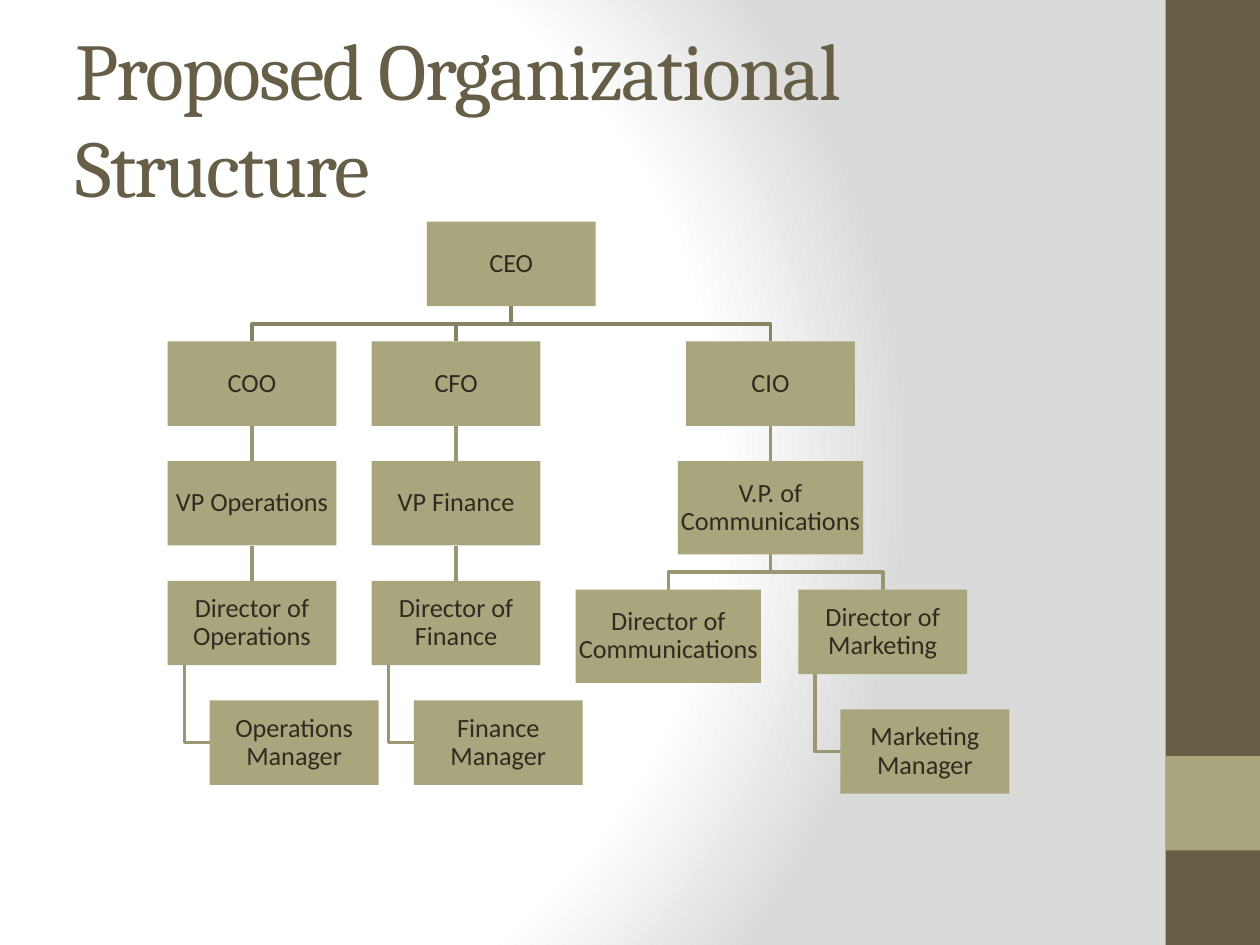
from dataclasses import dataclass

from lxml import etree
from pptx import Presentation
from pptx.dml.color import RGBColor
from pptx.enum.shapes import MSO_CONNECTOR, MSO_SHAPE
from pptx.enum.text import MSO_ANCHOR, PP_ALIGN
from pptx.oxml import parse_xml
from pptx.oxml.ns import nsdecls, qn
from pptx.util import Inches, Pt

RECT = MSO_SHAPE.RECTANGLE
STRAIGHT = MSO_CONNECTOR.STRAIGHT
MIDDLE = MSO_ANCHOR.MIDDLE
CENTER = PP_ALIGN.CENTER

COLORS = {
    "bar": "675E47",
    "box": "A9A57C",
    "ink": "2F2B20",
    "top": "878463",
    "low": "999671",
    "white": "FFFFFF",
    "gray": "DADADA",
}
WIDE, HIGH = 10, 7.5
BOX_W, BOX_H = 1.34, 0.67
BIG_W, BIG_H = 1.47, 0.74
GAP = 0.28
COL = BOX_W + GAP
LEFT, TOP = 2, 1.76


@dataclass
class Post:
    text: str
    col: float
    boss: "Post | None" = None
    big: bool = False
    hang: bool = False

    @property
    def wide(self) -> float:
        return BIG_W if self.big else BOX_W

    @property
    def high(self) -> float:
        return BIG_H if self.big else BOX_H

    @property
    def mid(self) -> float:
        return LEFT + self.col * COL + (BOX_W / 4 if self.hang else 0)

    @property
    def left(self) -> float:
        return self.mid - self.wide / 2

    @property
    def top(self) -> float:
        return self.boss.base + GAP if self.boss else TOP

    @property
    def base(self) -> float:
        return self.top + self.high


def color(name: str) -> RGBColor:
    return RGBColor.from_string(COLORS[name])


def add_rect(slide, left: float, top: float, wide: float, high: float, fill: str):
    shape = slide.shapes.add_shape(
        RECT, Inches(left), Inches(top), Inches(wide), Inches(high)
    )
    shape.shadow.inherit = False
    shape.fill.solid()
    shape.fill.fore_color.rgb = color(fill)
    shape.line.fill.background()
    return shape


def set_font(run, name: str, size: float, ink: str) -> None:
    run.font.name = name
    run.font.size = Pt(size)
    run.font.color.rgb = color(ink)


def add_post(slide, post: Post) -> None:
    frame = add_rect(
        slide, post.left, post.top, post.wide, post.high, "box"
    ).text_frame
    frame.text = post.text
    frame.word_wrap = True
    frame.vertical_anchor = MIDDLE
    frame.margin_left = frame.margin_right = Inches(0.01)
    frame.margin_top = frame.margin_bottom = Inches(0.01)
    para = frame.paragraphs[0]
    para.alignment = CENTER
    para.line_spacing = 0.9
    set_font(para.runs[0], "Calibri", 15, "ink")


def add_link(slide, post: Post) -> None:
    boss = post.boss
    if post.hang:
        stem, side = boss.left + boss.wide / 10, post.top + post.high / 2
        points = [(stem, boss.base), (stem, side), (post.left, side)]
    else:
        bend = boss.base + GAP / 2
        points = [
            (boss.mid, boss.base),
            (boss.mid, bend),
            (post.mid, bend),
            (post.mid, post.top),
        ]
    spots = [(Inches(x), Inches(y)) for x, y in points]
    if boss.mid == post.mid:
        link = slide.shapes.add_connector(STRAIGHT, *spots[0], *spots[-1])
    else:
        path = slide.shapes.build_freeform(*spots[0])
        path.add_line_segments(spots[1:], close=False)
        link = path.convert_to_shape()
        link.fill.background()
    link.line.color.rgb = color("low" if boss.boss else "top")
    link.line.width = Pt(2)
    etree.SubElement(link._element.spPr, qn("a:effectLst"))


def add_back(slide) -> None:
    slide.background.fill.solid()
    flat = slide._element.find(".//" + qn("a:solidFill"))
    stops = "".join(
        f'<a:gs pos="{pos * 1000}"><a:srgbClr val="{COLORS[name]}"/></a:gs>'
        for pos, name in ((0, "white"), (75, "white"), (100, "gray"))
    )
    grad = parse_xml(
        f'<a:gradFill {nsdecls("a")} rotWithShape="1"><a:gsLst>{stops}</a:gsLst>'
        '<a:path path="circle"><a:fillToRect l="20000" t="50000" r="100000"'
        ' b="50000"/></a:path></a:gradFill>'
    )
    flat.getparent().replace(flat, grad)


def add_title(slide, text: str) -> None:
    frame = slide.shapes.add_textbox(
        Inches(WIDE * 0.05), Inches(HIGH * 0.04), Inches(8.33), Inches(HIGH / 6)
    ).text_frame
    frame.text = text
    frame.word_wrap = True
    frame.vertical_anchor = MIDDLE
    run = frame.paragraphs[0].runs[0]
    set_font(run, "Cambria", 46, "bar")
    run.font._element.set("spc", "-100")


def get_posts() -> list[Post]:
    ceo = Post("CEO", 1.27)
    posts = [ceo]
    for col, chief, name in ((0, "COO", "Operations"), (1, "CFO", "Finance")):
        head = Post(chief, col, ceo)
        vice = Post(f"VP {name}", col, head)
        lead = Post(f"Director of {name}", col, vice)
        posts += [head, vice, lead, Post(f"{name} Manager", col, lead, hang=True)]
    cio = Post("CIO", 2.54, ceo)
    vice = Post("V.P. of Communications", 2.54, cio, big=True)
    comms = Post("Director of Communications", 2.04, vice, big=True)
    sales = Post("Director of Marketing", 3.09, vice)
    aide = Post("Marketing Manager", 3.09, sales, hang=True)
    return posts + [cio, vice, comms, sales, aide]


def main() -> None:
    deck = Presentation()
    deck.slide_width, deck.slide_height = Inches(WIDE), Inches(HIGH)
    slide = deck.slides.add_slide(deck.slide_layouts[6])
    add_back(slide)
    add_rect(slide, WIDE * 0.925, 0, WIDE * 0.075, HIGH, "bar")
    add_rect(slide, WIDE * 0.925, HIGH * 0.8, WIDE * 0.075, HIGH * 0.1, "box")
    add_title(slide, "Proposed Organizational Structure")
    posts = get_posts()
    for post in posts[1:]:
        add_link(slide, post)
    for post in posts:
        add_post(slide, post)
    deck.save("out.pptx")


if __name__ == "__main__":
    main()
